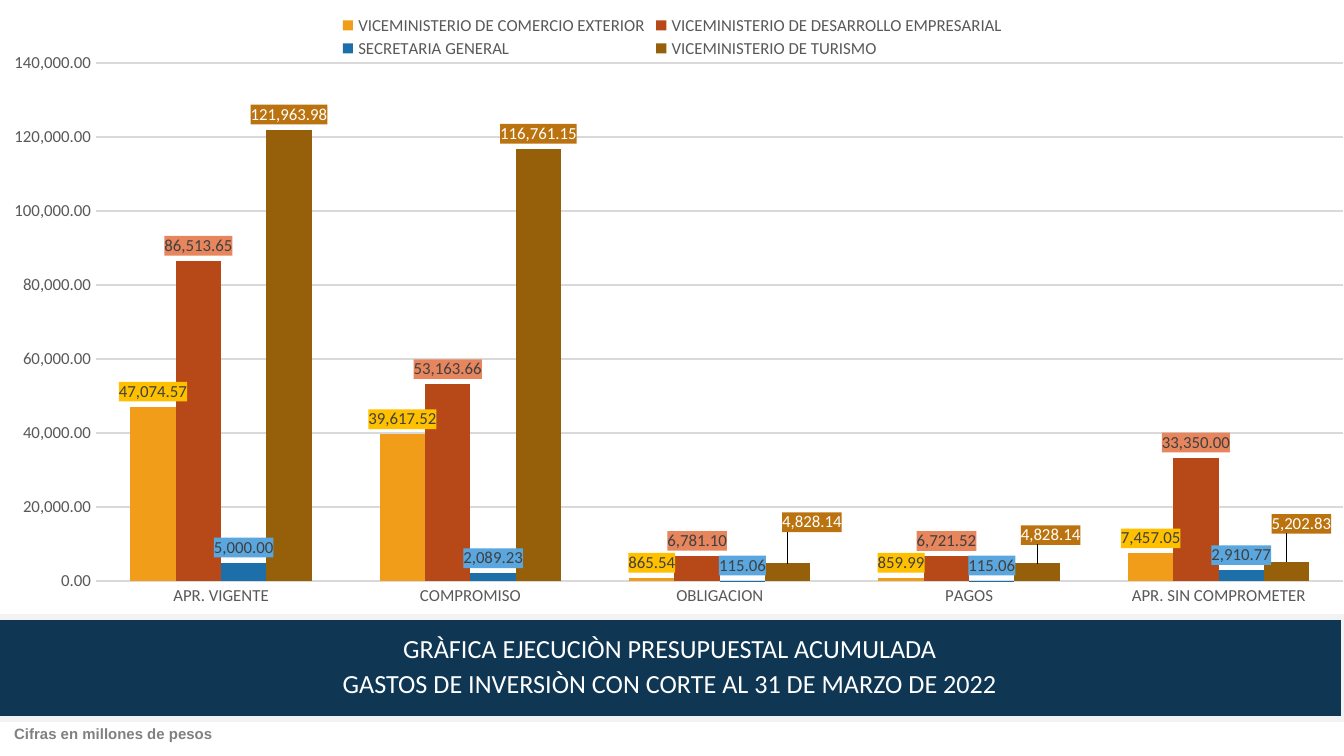
from copy import deepcopy
from dataclasses import dataclass, field

from pptx import Presentation
from pptx.chart.data import CategoryChartData
from pptx.dml.color import RGBColor
from pptx.enum.chart import XL_CHART_TYPE as ChartType
from pptx.enum.chart import XL_LABEL_POSITION as LabelPosition
from pptx.enum.chart import XL_LEGEND_POSITION as LegendPosition
from pptx.enum.chart import XL_TICK_MARK as TickMark
from pptx.enum.shapes import MSO_SHAPE as ShapeKind
from pptx.enum.text import MSO_ANCHOR as Anchor
from pptx.enum.text import MSO_AUTO_SIZE as AutoSize
from pptx.enum.text import PP_ALIGN as Align
from pptx.oxml import parse_xml
from pptx.oxml.ns import nsdecls, qn
from pptx.util import Pt

EMU_PER_PX = 914400 / 134.4
PAGE_WIDTH, PAGE_HEIGHT = 1344, 756
CHART_WIDTH, CHART_HEIGHT = 1343, 617
NUMBER_FORMAT = "#,##0.00"

COLORS = {
    "navy": "0F3754", "border": "F2F2F2", "white": "FFFFFF",
    "note": "808080", "axis": "595959", "grid": "D9D9D9", "label": "404040",
    "orange": "F19D19", "yellow": "FFC000", "rust": "B74919",
    "salmon": "E7855D", "blue": "1D6FA9", "sky": "5AA7DF",
    "brown": "965F09", "ochre": "BA730F",
}


@dataclass
class Series:
    name: str
    values: tuple[float, ...]
    color: str
    label_fill: str
    label_color: str = "label"
    label_shifts: dict[int, tuple[int, int]] = field(default_factory=dict)


@dataclass
class TextStyle:
    size: int
    font: str
    color: str
    space_before: float
    bold: bool = False
    align: Align = Align.LEFT


CATEGORIES = ("APR. VIGENTE", "COMPROMISO", "OBLIGACION", "PAGOS", "APR. SIN COMPROMETER")
SERIES = (
    Series("VICEMINISTERIO DE COMERCIO EXTERIOR",
           (47074.57, 39617.52, 865.54, 859.99, 7457.05), "orange", "yellow"),
    Series("VICEMINISTERIO DE DESARROLLO EMPRESARIAL",
           (86513.65, 53163.66, 6781.1, 6721.52, 33350), "rust", "salmon"),
    Series("SECRETARIA GENERAL",
           (5000, 2089.23, 115.06, 115.06, 2910.77), "blue", "sky"),
    Series("VICEMINISTERIO DE TURISMO",
           (121963.98, 116761.15, 4828.14, 4828.14, 5202.83), "brown", "ochre", "white",
           {2: (24, -26), 3: (14, -13), 4: (15, -23)}),
)
TITLE = (
    "GRÀFICA EJECUCIÒN PRESUPUESTAL ACUMULADA",
    "GASTOS DE INVERSIÒN CON CORTE AL 31 DE MARZO DE 2022",
)


def px(*lengths: int) -> list[int]:
    return [round(length * EMU_PER_PX) for length in lengths]


def rgb(name: str) -> RGBColor:
    return RGBColor.from_string(COLORS[name])


def style_font(font, size: int, name: str, color: str, bold: bool = False) -> None:
    font.size, font.name, font.bold = Pt(size), name, bold
    font.color.rgb = rgb(color)


def write_lines(frame, lines: tuple[str, ...], style: TextStyle) -> None:
    frame.word_wrap = True
    for index, line in enumerate(lines):
        para = frame.add_paragraph() if index else frame.paragraphs[0]
        para.alignment, para.line_spacing = style.align, 0.9
        para.space_before = Pt(style.space_before)
        span = para.add_run()
        span.text = line
        style_font(span.font, style.size, style.font, style.color, style.bold)


def layout_xml(x: float, y: float, width: float = 0, height: float = 0, target: str = ""):
    parts = [f'<c:layoutTarget val="{target}"/>'] if target else []
    if width:
        parts += ['<c:xMode val="edge"/>', '<c:yMode val="edge"/>']
    parts += [f'<c:x val="{x:.3f}"/>', f'<c:y val="{y:.3f}"/>']
    if width:
        parts += [f'<c:w val="{width:.3f}"/>', f'<c:h val="{height:.3f}"/>']
    return parse_xml(f'<c:layout {nsdecls("c")}><c:manualLayout>{"".join(parts)}'
                     '</c:manualLayout></c:layout>')


def replace_layout(parent, layout, index: int) -> None:
    for old in parent.findall(qn("c:layout")):
        parent.remove(old)
    parent.insert(index, layout)


def label_series(plot_series, series: Series) -> None:
    labels = plot_series.data_labels
    labels.show_value = True
    labels.number_format, labels.number_format_is_linked = NUMBER_FORMAT, False
    labels.position = LabelPosition.OUTSIDE_END
    style_font(labels.font, 9, "Calibri", series.label_color)
    node = plot_series._element.find(qn("c:dLbls"))
    node.find(qn("c:numFmt")).addnext(parse_xml(
        f'<c:spPr {nsdecls("c", "a")}><a:solidFill>'
        f'<a:srgbClr val="{COLORS[series.label_fill]}"/></a:solidFill></c:spPr>'))
    shared = list(node)
    for position, (point, (right, down)) in enumerate(series.label_shifts.items()):
        label = parse_xml(f'<c:dLbl {nsdecls("c")}><c:idx val="{point}"/></c:dLbl>')
        label.append(layout_xml(right / CHART_WIDTH, down / CHART_HEIGHT))
        label.extend(deepcopy(child) for child in shared)
        node.insert(position, label)


def style_axis(axis) -> None:
    axis.major_tick_mark = axis.minor_tick_mark = TickMark.NONE
    axis.format.line.fill.background()
    style_font(axis.tick_labels.font, 9, "Calibri", "axis")


def add_budget_chart(page) -> None:
    data = CategoryChartData(number_format=NUMBER_FORMAT)
    data.categories = CATEGORIES
    for series in SERIES:
        data.add_series(series.name, series.values)
    chart = page.shapes.add_chart(
        ChartType.COLUMN_CLUSTERED, *px(1, 0, CHART_WIDTH, CHART_HEIGHT), data).chart
    chart.has_title = False
    chart.font.size, chart.font.name = Pt(10), "Calibri"

    plot = chart.plots[0]
    plot.gap_width, plot.overlap, plot.vary_by_categories = 150, 0, False
    for plot_series, series in zip(plot.series, SERIES):
        plot_series.format.fill.solid()
        plot_series.format.fill.fore_color.rgb = rgb(series.color)
        label_series(plot_series, series)

    style_axis(chart.category_axis)
    values = chart.value_axis
    style_axis(values)
    values.minimum_scale, values.maximum_scale, values.major_unit = 0, 140000, 20000
    values.tick_labels.number_format = NUMBER_FORMAT
    values.tick_labels.number_format_is_linked = False
    values.major_gridlines.format.line.color.rgb = rgb("grid")
    values.major_gridlines.format.line.width = Pt(0.75)

    chart.has_legend = True
    legend = chart.legend
    legend.position, legend.include_in_layout = LegendPosition.TOP, False
    style_font(legend.font, 9, "Calibri", "axis")
    replace_layout(legend._element, layout_xml(0.25, 0.02, 0.5, 0.08), 1)
    plot_area = chart._chartSpace.chart.plotArea
    replace_layout(plot_area, layout_xml(0.071, 0.102, 0.929, 0.84, "inner"), 0)


def add_banner(page) -> None:
    banner = page.shapes.add_shape(ShapeKind.RECTANGLE, *px(-4, 617, 1348, 102))
    banner.shadow.inherit = False
    banner.fill.solid()
    banner.fill.fore_color.rgb = rgb("navy")
    banner.line.color.rgb = rgb("border")
    banner.line.width = Pt(3)
    frame = banner.text_frame
    frame.vertical_anchor = Anchor.MIDDLE
    frame.margin_left = frame.margin_right = frame.margin_top = frame.margin_bottom = 0
    write_lines(frame, TITLE, TextStyle(14, "Calibri", "white", 3.6, align=Align.CENTER))


def add_note(page) -> None:
    box = page.shapes.add_textbox(*px(1, 720, 269, 30))
    write_lines(box.text_frame, ("Cifras en millones de pesos",),
                TextStyle(8, "Arial", "note", 8, bold=True))
    box.text_frame.auto_size = AutoSize.SHAPE_TO_FIT_TEXT


def main() -> None:
    deck = Presentation()
    deck.slide_width, deck.slide_height = px(PAGE_WIDTH, PAGE_HEIGHT)
    page = deck.slides.add_slide(deck.slide_layouts[6])
    add_banner(page)
    add_note(page)
    add_budget_chart(page)
    deck.save("out.pptx")


if __name__ == "__main__":
    main()
